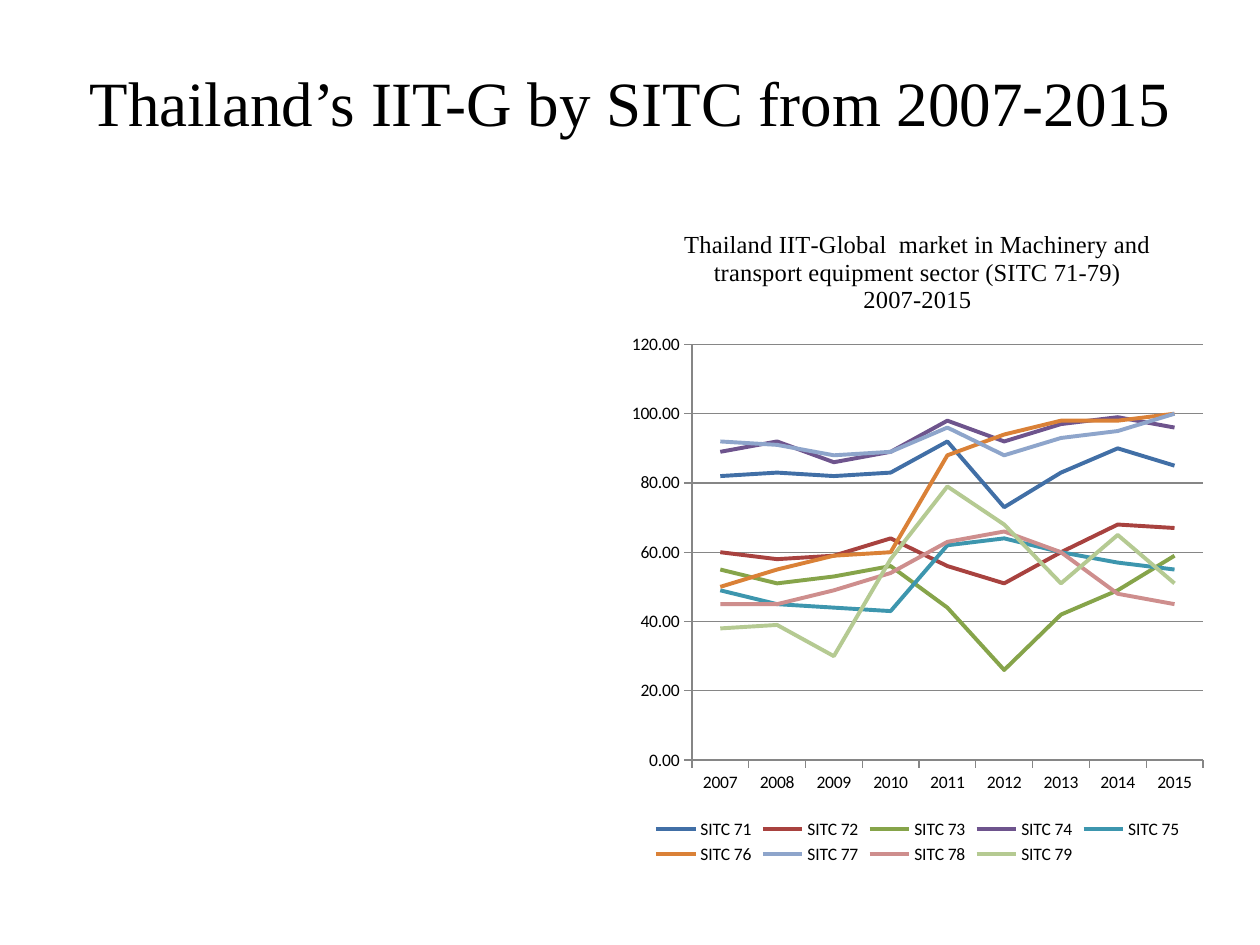
from pptx import Presentation
from pptx.chart.data import CategoryChartData
from pptx.dml.color import RGBColor
from pptx.enum.chart import XL_CHART_TYPE, XL_LEGEND_POSITION, XL_TICK_MARK
from pptx.enum.text import MSO_ANCHOR, PP_ALIGN
from pptx.util import Cm, Pt

HUES = {
    "text": "000000", "grid": "868686",
    "SITC 71": "416FA6", "SITC 72": "A8423F", "SITC 73": "86A44A",
    "SITC 74": "6E548D", "SITC 75": "3D96AE", "SITC 76": "DA8137",
    "SITC 77": "8EA5CB", "SITC 78": "CE8E8D", "SITC 79": "B5CA92",
}
SERIF = "Times New Roman"
YEARS = [str(year) for year in range(2007, 2016)]
RATES = {
    "SITC 71": (82, 83, 82, 83, 92, 73, 83, 90, 85),
    "SITC 72": (60, 58, 59, 64, 56, 51, 60, 68, 67),
    "SITC 73": (55, 51, 53, 56, 44, 26, 42, 49, 59),
    "SITC 74": (89, 92, 86, 89, 98, 92, 97, 99, 96),
    "SITC 75": (49, 45, 44, 43, 62, 64, 60, 57, 55),
    "SITC 76": (50, 55, 59, 60, 88, 94, 98, 98, 100),
    "SITC 77": (92, 91, 88, 89, 96, 88, 93, 95, 100),
    "SITC 78": (45, 45, 49, 54, 63, 66, 60, 48, 45),
    "SITC 79": (38, 39, 30, 58, 79, 68, 51, 65, 51),
}


def hue(name):
    return RGBColor.from_string(HUES[name])


def set_font(font, face, size):
    font.name = face
    font.size = Pt(size)
    font.bold = False
    font.color.rgb = hue("text")


def set_line(line, name, width):
    line.color.rgb = hue(name)
    line.width = Pt(width)


def add_title(slide, text):
    box = slide.shapes.add_textbox(Cm(1.27), Cm(0.76), Cm(22.86), Cm(2.57))
    frame = box.text_frame
    frame.word_wrap = True
    frame.vertical_anchor = MSO_ANCHOR.MIDDLE
    para = frame.paragraphs[0]
    para.text = text
    para.alignment = PP_ALIGN.CENTER
    set_font(para.font, SERIF, 36)


def add_lines(slide, title):
    data = CategoryChartData(number_format="0.00")
    data.categories = YEARS
    for name, rates in RATES.items():
        data.add_series(name, rates)
    chart = slide.shapes.add_chart(
        XL_CHART_TYPE.LINE, Cm(12.5), Cm(4.11), Cm(11.99), Cm(13.41), data
    ).chart
    set_font(chart.font, "Calibri", 10)

    # Chart title and legend
    para = chart.chart_title.text_frame.paragraphs[0]
    para.text = title
    set_font(para.font, SERIF, 14)
    chart.chart_title.include_in_layout = False
    chart.has_legend = True
    chart.legend.position = XL_LEGEND_POSITION.BOTTOM
    chart.legend.include_in_layout = False

    # Axes
    for axis in (chart.category_axis, chart.value_axis):
        axis.major_tick_mark = XL_TICK_MARK.OUTSIDE
        set_line(axis.format.line, "grid", 0.75)
    scale = chart.value_axis
    scale.minimum_scale, scale.maximum_scale, scale.major_unit = 0, 120, 20
    scale.tick_labels.number_format = "0.00"
    scale.tick_labels.number_format_is_linked = False
    set_line(scale.major_gridlines.format.line, "grid", 0.75)

    # Series
    chart.plots[0].vary_by_categories = False
    for line in chart.plots[0].series:
        line.smooth = False
        set_line(line.format.line, line.name, 2.25)


def main():
    deck = Presentation()
    deck.slide_width, deck.slide_height = Cm(25.4), Cm(19.05)
    slide = deck.slides.add_slide(deck.slide_layouts[6])
    add_title(slide, "Thailand’s IIT-G by SITC from 2007-2015")
    add_lines(slide, "Thailand IIT-Global  market in Machinery and transport "
                     "equipment sector (SITC 71-79) 2007-2015")
    deck.save("out.pptx")


if __name__ == "__main__":
    main()
